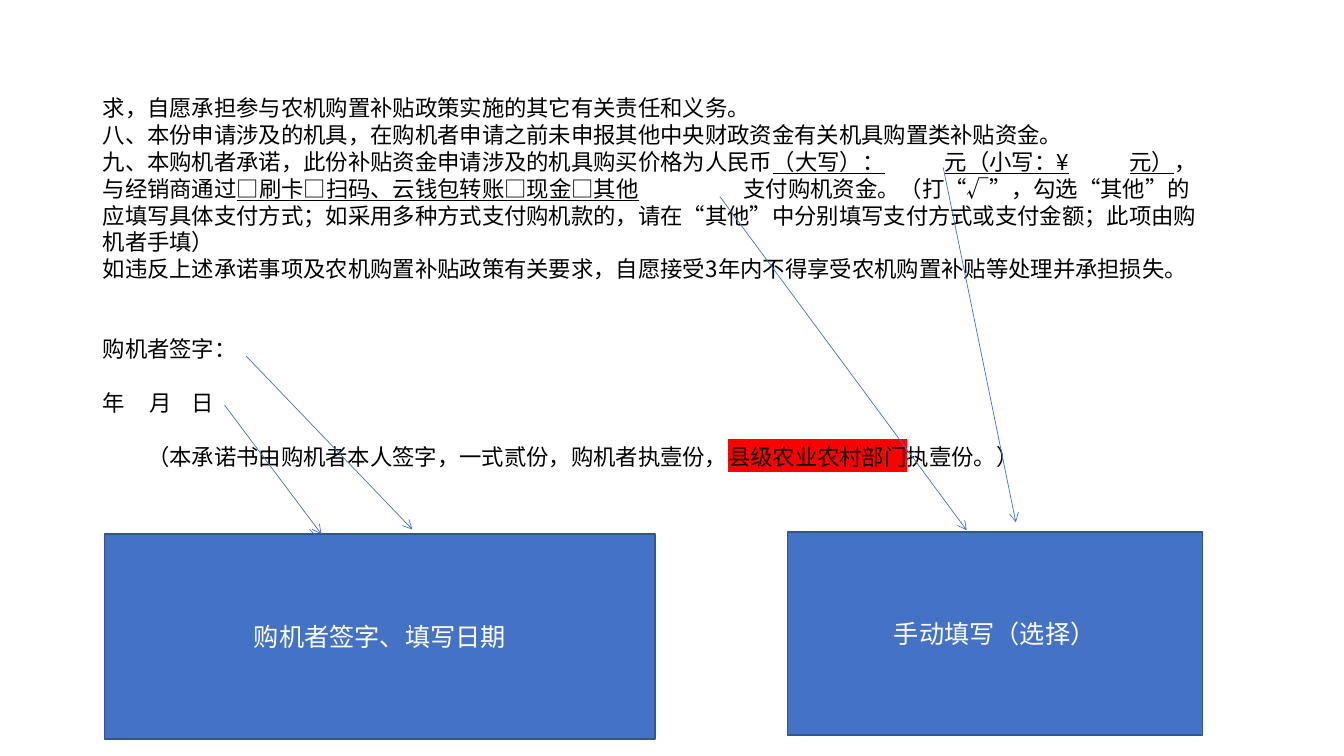
from dataclasses import dataclass

from lxml.etree import SubElement
from pptx import Presentation
from pptx.dml.color import RGBColor
from pptx.enum.shapes import MSO_CONNECTOR, MSO_SHAPE
from pptx.enum.text import MSO_ANCHOR, MSO_AUTO_SIZE, PP_ALIGN
from pptx.oxml.ns import qn
from pptx.util import Cm, Pt


@dataclass(frozen=True)
class Theme:
    font: str = "Noto Sans CJK SC"
    body_size: Pt = Pt(16)
    label_size: Pt = Pt(18)
    line_height: Pt = Pt(19.12)
    text: RGBColor = RGBColor(0, 0, 0)
    label: RGBColor = RGBColor(255, 255, 255)
    accent: RGBColor = RGBColor.from_string("4472C4")
    border: RGBColor = RGBColor.from_string("325491")
    highlight: str = "FF0000"


theme = Theme()


def set_font(paragraph, size, color):
    paragraph.font.size = size
    paragraph.font.color.rgb = color
    paragraph.font.name = theme.font
    defaults = paragraph.font._element
    SubElement(defaults, qn("a:ea")).set("typeface", theme.font)


def set_tabs(paragraph, stops):
    tab_list = SubElement(paragraph._p.get_or_add_pPr(), qn("a:tabLst"))
    for stop in stops:
        SubElement(tab_list, qn("a:tab"), pos=str(Cm(stop)), algn="l")


presentation = Presentation()
presentation.slide_width = Cm(33.87)
presentation.slide_height = Cm(19.05)
slide = presentation.slides.add_slide(presentation.slide_layouts[6])

PLAIN, UNDERLINED, HIGHLIGHTED = range(3)
commitment = [
    (0, 0, [], [("求，自愿承担参与农机购置补贴政策实施的其它有关责任和义务。", PLAIN)]),
    (0, 0, [], [("八、本份申请涉及的机具，在购机者申请之前未申报其他中央财政资金有关机具购置类补贴资金。", PLAIN)]),
    (0, 0, [16.15, 21.22, 25.88], [
        ("九、本购机者承诺，此份补贴资金申请涉及的机具购买价格为人民币", PLAIN),
        ("（大写）：\t元（小写：¥\t元）", UNDERLINED),
        ("，与经销商通过", PLAIN),
        ("□刷卡□扫码、云钱包转账□现金□其他\t", UNDERLINED),
        ("支付购机资金。（打“√”，勾选“其他”的应填写具体支付方式；"
         "如采用多种方式支付购机款的，请在“其他”中分别填写支付方式或支付金额；"
         "此项由购机者手填）", PLAIN),
    ]),
    (0, 0, [], [("如违反上述承诺事项及农机购置补贴政策有关要求，自愿接受3年内不得享受农机购置补贴等处理并承担损失。", PLAIN)]),
    (2, 0, [], [("购机者签字：", PLAIN)]),
    (1, 0, [1.19, 2.24], [("年\t月\t日", PLAIN)]),
    (1, 1.12, [], [
        ("（本承诺书由购机者本人签字，一式贰份，购机者执壹份，", PLAIN),
        ("县级农业农村部门", HIGHLIGHTED),
        ("执壹份。）", PLAIN),
    ]),
]

text_box = slide.shapes.add_textbox(Cm(2.34), Cm(2.26), Cm(28.4), Cm(9.83))
frame = text_box.text_frame
frame.word_wrap = True
frame.auto_size = MSO_AUTO_SIZE.SHAPE_TO_FIT_TEXT
for index, (lines_before, indent, stops, pieces) in enumerate(commitment):
    paragraph = frame.add_paragraph() if index else frame.paragraphs[0]
    paragraph.line_spacing = theme.line_height
    if lines_before:
        paragraph.space_before = Pt(lines_before * theme.line_height.pt)
    if indent:
        paragraph._p.get_or_add_pPr().set("indent", str(Cm(indent)))
    if stops:
        set_tabs(paragraph, stops)
    set_font(paragraph, theme.body_size, theme.text)
    for text, style in pieces:
        run = paragraph.add_run()
        run.text = text
        if style == UNDERLINED:
            run.font.underline = True
        if style == HIGHLIGHTED:
            highlight = SubElement(run.font._element, qn("a:highlight"))
            SubElement(highlight, qn("a:srgbClr"), val=theme.highlight)

notes = [
    ("手动填写（选择）", 19.84, 13.41, 10.46, 5.11),
    ("购机者签字、填写日期", 2.64, 13.46, 13.87, 5.16),
]
for text, left, top, width, height in notes:
    shape = slide.shapes.add_shape(
        MSO_SHAPE.RECTANGLE, Cm(left), Cm(top), Cm(width), Cm(height))
    shape.shadow.inherit = False
    shape.fill.solid()
    shape.fill.fore_color.rgb = theme.accent
    shape.line.color.rgb = theme.border
    shape.line.width = Pt(1)
    shape.text_frame.word_wrap = True
    shape.text_frame.vertical_anchor = MSO_ANCHOR.MIDDLE
    paragraph = shape.text_frame.paragraphs[0]
    paragraph.text = text
    paragraph.alignment = PP_ALIGN.CENTER
    set_font(paragraph, theme.label_size, theme.label)

arrows = [
    (6.2, 8.97, 10.39, 13.34),
    (7.8, 13.34, 10.34, 15.88),
    (5.66, 10.21, 8.1, 13.46),
    (23.77, 4.22, 25.6, 13.16),
    (18.14, 4.95, 24.36, 13.36),
]
for points in arrows:
    arrow = slide.shapes.add_connector(
        MSO_CONNECTOR.STRAIGHT, *[Cm(point) for point in points])
    arrow.line.color.rgb = theme.accent
    arrow.line.width = Pt(0.5)
    SubElement(arrow.line._get_or_add_ln(), qn("a:tailEnd"), type="arrow")
    SubElement(arrow._element.spPr, qn("a:effectLst"))

presentation.save("out.pptx")
